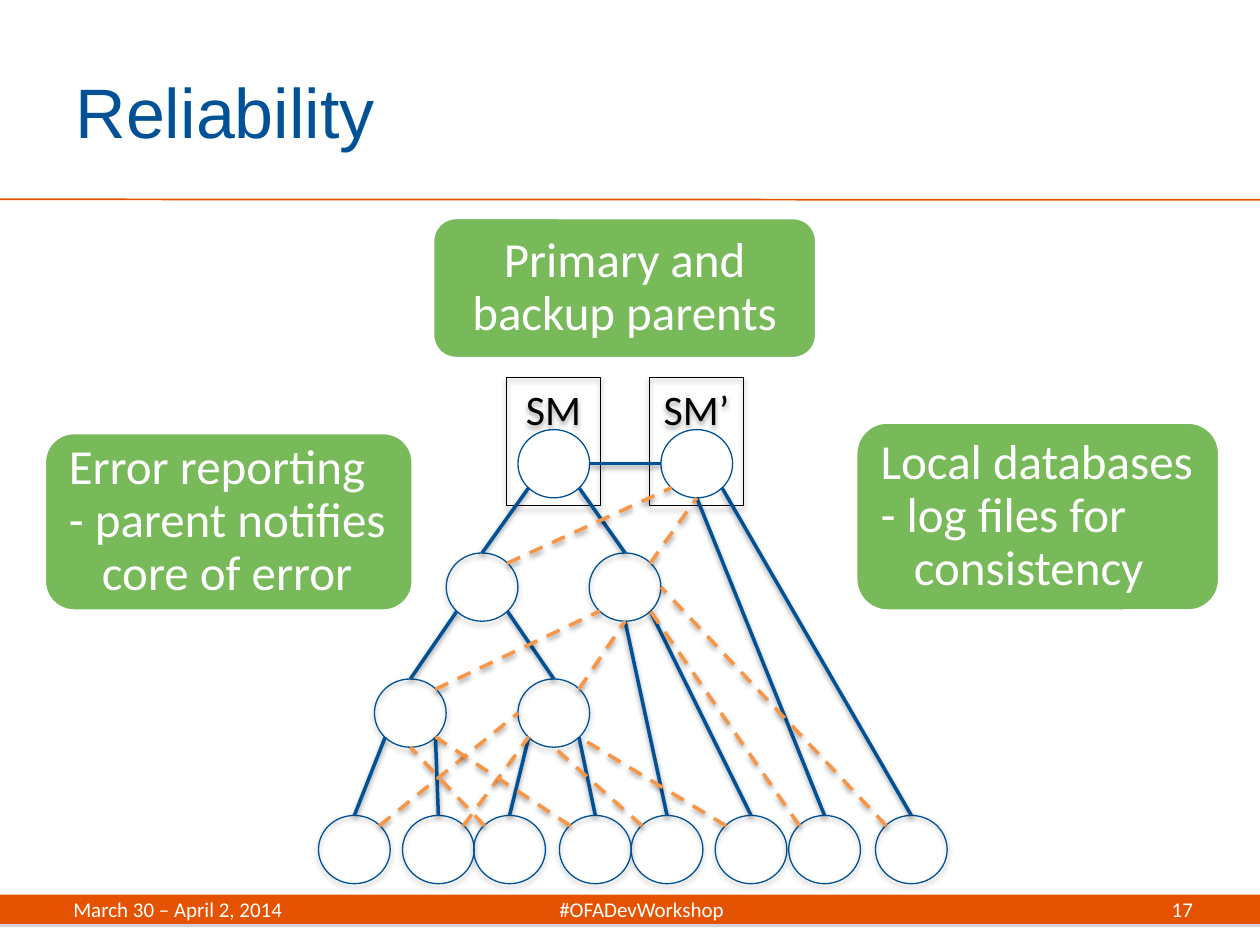
from lxml import etree
from pptx import Presentation
from pptx.dml.color import RGBColor
from pptx.enum import dml, shapes, text
from pptx.oxml import ns
from pptx.util import Pt

BLUE, ORANGE, GREEN = "005195", "E55302", "78B959"
BACKUP, WHITE, BLACK = "F79646", "FFFFFF", "000000"
NODE_WIDTH, NODE_HEIGHT = 41, 39
SHAPE_SHADOW = (BLACK, 35, 3.1, 1.8)
LINE_SHADOW = (BLACK, 38, 3.1, 1.6)

# Node positions within the tree
NODES = {"sm": (114, 29.5), "sm2": (195.7, 29.5), "a": (73, 100), "b": (154.7, 100),
         "c": (32, 172), "d": (114, 172)}
for number, leaf_left in enumerate((0, 48, 88.7, 137.7, 178.7, 226.7, 268.7, 318.3)):
    NODES[f"leaf{number}"] = (leaf_left, 250)

# Points on a node's outline, as fractions of its width and height
SITES = {"top": (0.5, 0), "left": (0, 0.5), "bottom": (0.5, 1), "right": (1, 0.5),
         "tl": (0.15, 0.15), "tr": (0.85, 0.15), "bl": (0.15, 0.85), "br": (0.85, 0.85)}

PRIMARY_LINKS = [
    ("sm", "bl", "a", "top"), ("sm", "br", "b", "top"), ("sm", "right", "sm2", "left"),
    ("a", "bl", "c", "top"), ("a", "br", "d", "top"),
    ("c", "bl", "leaf0", "top"), ("c", "br", "leaf1", "top"),
    ("d", "bl", "leaf2", "top"), ("d", "br", "leaf3", "top"),
    ("b", "bottom", "leaf4", "top"), ("b", "br", "leaf5", "top"),
    ("sm2", "bottom", "leaf6", "top"), ("sm2", "br", "leaf7", "top"),
]
BACKUP_LINKS = [
    ("a", "tr", "sm2", "bl"), ("b", "tr", "sm2", "bottom"),
    ("c", "tr", "b", "bl"), ("d", "tr", "b", "bottom"),
    ("leaf0", "tr", "d", "left"), ("leaf1", "tr", "d", "bl"),
    ("leaf2", "tl", "c", "bottom"), ("leaf3", "tl", "c", "br"),
    ("leaf4", "tl", "d", "bottom"), ("leaf7", "tl", "b", "right"),
    ("leaf6", "tl", "b", "br"), ("leaf5", "tl", "d", "br"),
]


def rgb(value):
    return RGBColor.from_string(value)


def set_shadow(shape, shadow=None):
    """Set a downward shadow (colour, opacity %, blur, distance), or none; call after the line is set."""
    effects = etree.SubElement(shape.element.spPr, ns.qn("a:effectLst"))
    if shadow:
        color, opacity, blur, distance = shadow
        outer = etree.SubElement(effects, ns.qn("a:outerShdw"), blurRad=str(Pt(blur)),
                                 dist=str(Pt(distance)), dir="5400000", rotWithShape="0")
        tint = etree.SubElement(outer, ns.qn("a:srgbClr"), val=color)
        etree.SubElement(tint, ns.qn("a:alpha"), val=str(opacity * 1000))


def add_block(slide, kind, box, fill=None, line=None, width=0.75, shadow=None):
    shape = slide.shapes.add_shape(kind, *map(Pt, box))
    if fill:
        shape.fill.solid()
        shape.fill.fore_color.rgb = rgb(fill)
    else:
        shape.fill.background()
    if line:
        shape.line.color.rgb = rgb(line)
        shape.line.width = Pt(width)
    else:
        shape.line.fill.background()
    set_shadow(shape, shadow)
    return shape


def add_line(slide, start, end, color, width, dashed=False, shadow=None):
    line = slide.shapes.add_connector(shapes.MSO_CONNECTOR.STRAIGHT, *map(Pt, (*start, *end)))
    line.line.color.rgb = rgb(color)
    line.line.width = Pt(width)
    if dashed:
        line.line.dash_style = dml.MSO_LINE.DASH
    set_shadow(line, shadow)


def format_paragraph(paragraph, size, color, font="Calibri", align=text.PP_ALIGN.LEFT):
    paragraph.alignment = align
    for run in paragraph.runs:
        run.font.name = font
        run.font.size = Pt(size)
        run.font.color.rgb = rgb(color)


def add_title(slide, box, wording):
    title = slide.shapes.title
    title.left, title.top, title.width, title.height = map(Pt, box)
    title.text_frame.text = wording
    title.text_frame.vertical_anchor = text.MSO_ANCHOR.MIDDLE
    format_paragraph(title.text_frame.paragraphs[0], 40, BLUE, "Arial")


def add_footer_text(slide, box, wording, align, center_tab=None):
    frame = slide.shapes.add_textbox(*map(Pt, box)).text_frame
    frame.word_wrap = True
    frame.vertical_anchor = text.MSO_ANCHOR.MIDDLE
    frame.text = wording
    paragraph = frame.paragraphs[0]
    if center_tab:
        properties = paragraph._p.get_or_add_pPr()
        tabs = etree.SubElement(properties, ns.qn("a:tabLst"))
        etree.SubElement(tabs, ns.qn("a:tab"), pos=str(Pt(center_tab)), algn="ctr")
    format_paragraph(paragraph, 12, WHITE, align=align)


def add_footer(slide, box):
    left, top, width, height = box
    add_block(slide, shapes.MSO_SHAPE.RECTANGLE, box, ORANGE, shadow=("808080", 35, 0, 1.8))
    add_footer_text(slide, (left + 34.8, top, 651.5, height),
                    "March 30 – April 2, 2014\t#OFADevWorkshop", text.PP_ALIGN.LEFT, 324.7)
    add_footer_text(slide, (left + width - 116.7, top, 85.5, height), "17", text.PP_ALIGN.RIGHT)


def add_callout(slide, box, lines, align=text.PP_ALIGN.LEFT):
    """Add a green box; a third line is set in under the second."""
    shape = add_block(slide, shapes.MSO_SHAPE.ROUNDED_RECTANGLE, box, GREEN, WHITE, 2)
    frame = shape.text_frame
    frame.word_wrap = True
    frame.vertical_anchor = text.MSO_ANCHOR.MIDDLE
    frame.margin_left, frame.margin_right = Pt(9), Pt(4)
    if align == text.PP_ALIGN.CENTER:
        frame.margin_right = frame.margin_left
    frame.text = "\n".join(lines)
    for index, paragraph in enumerate(frame.paragraphs):
        paragraph.line_spacing = 0.9
        if index == 2:
            paragraph._p.get_or_add_pPr().set("marL", str(Pt(19)))
        format_paragraph(paragraph, 28, WHITE, align=align)


def add_manager(slide, box, label):
    shape = add_block(slide, shapes.MSO_SHAPE.RECTANGLE, box, line=BLACK, shadow=SHAPE_SHADOW)
    frame = shape.text_frame
    frame.word_wrap = False
    frame.vertical_anchor = text.MSO_ANCHOR.TOP
    frame.text = label
    format_paragraph(frame.paragraphs[0], 24, BLACK, align=text.PP_ALIGN.CENTER)


def add_nodes(slide, left, top):
    for name, label in (("sm", "SM"), ("sm2", "SM’")):
        add_manager(slide, (left + NODES[name][0] - 6.5, top - 0.2, 53.5, 73.3), label)
    for name, (x, y) in NODES.items():
        shadow = None if name.startswith("sm") else SHAPE_SHADOW
        add_block(slide, shapes.MSO_SHAPE.OVAL, (left + x, top + y, NODE_WIDTH, NODE_HEIGHT),
                  line=BLUE, shadow=shadow)


def add_links(slide, left, top, links, color, dashed=False):
    def point(name, site):
        (x, y), (across, down) = NODES[name], SITES[site]
        return left + x + across * NODE_WIDTH, top + y + down * NODE_HEIGHT

    for start, start_site, end, end_site in links:
        add_line(slide, point(start, start_site), point(end, end_site), color, 2,
                 dashed, LINE_SHADOW)


def main():
    presentation = Presentation()
    presentation.slide_width, presentation.slide_height = Pt(720), Pt(540)
    slide = presentation.slides.add_slide(presentation.slide_layouts[5])
    add_title(slide, (36, 18, 588, 90), "Reliability")
    add_line(slide, (0, 113.9), (720, 114.2), ORANGE, 1)
    add_footer(slide, (0, 511.2, 720, 16.8))

    tree = (182, 216)
    add_nodes(slide, *tree)
    add_links(slide, *tree, PRIMARY_LINKS, BLUE)
    add_callout(slide, (489, 241.2, 208, 108),
                ["Local databases", "- log files for", "consistency"])
    add_callout(slide, (247.2, 124.3, 219.5, 80.6), ["Primary and backup parents"],
                text.PP_ALIGN.CENTER)
    add_callout(slide, (25.3, 247.2, 210.8, 102),
                ["Error reporting", "- parent notifies", "core of error"])
    add_links(slide, *tree, BACKUP_LINKS, BACKUP, dashed=True)
    presentation.save("out.pptx")


if __name__ == "__main__":
    main()
